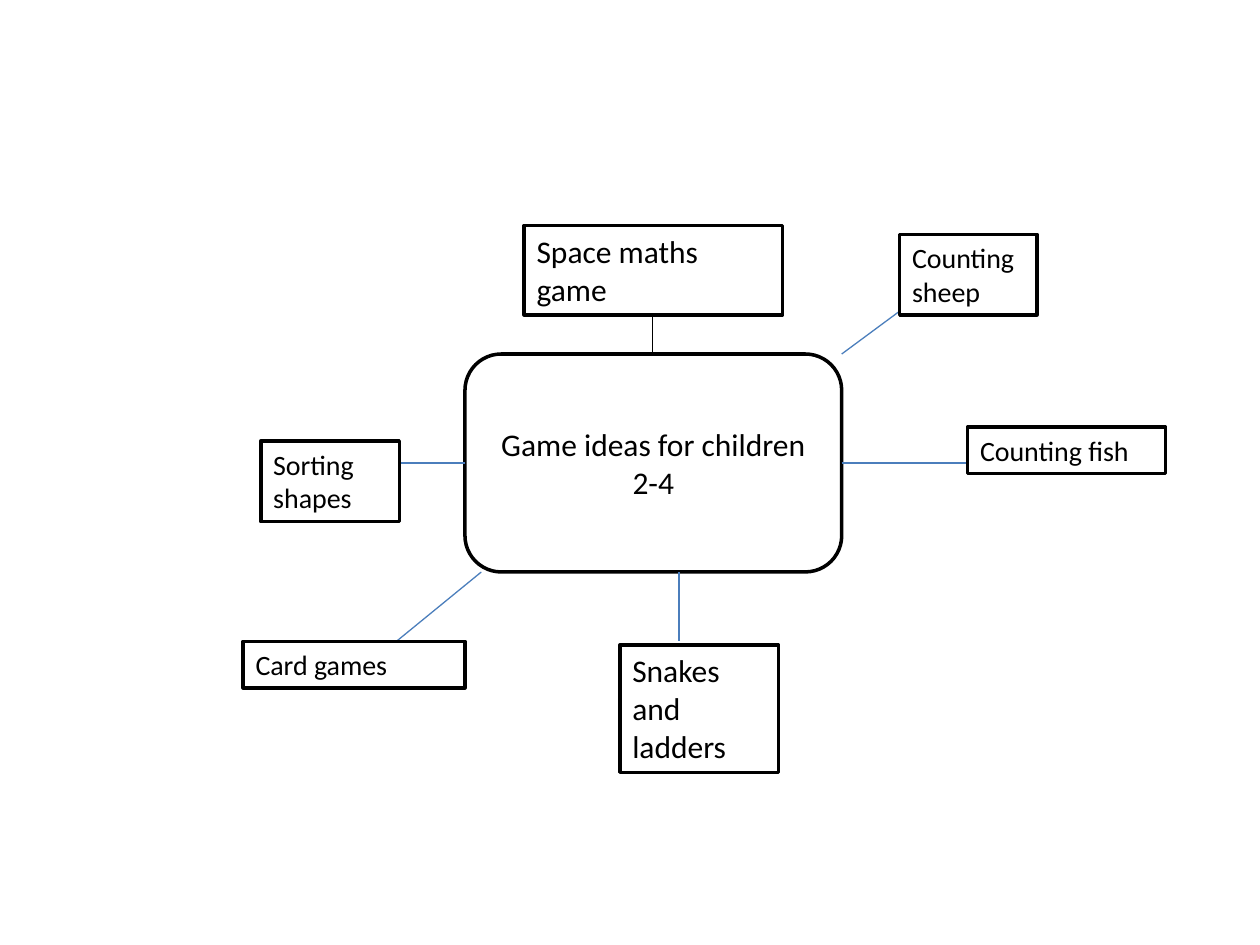
from lxml import etree
from pptx import Presentation
from pptx.dml.color import RGBColor
from pptx.enum.shapes import MSO_CONNECTOR, MSO_SHAPE
from pptx.enum.text import MSO_ANCHOR, MSO_AUTO_SIZE, PP_ALIGN
from pptx.oxml.ns import qn
from pptx.util import Inches, Pt

BLACK = RGBColor(0x00, 0x00, 0x00)
WHITE = RGBColor(0xFF, 0xFF, 0xFF)
BLUE = RGBColor(0x4B, 0x7E, 0xBC)
RECTANGLE = MSO_SHAPE.RECTANGLE
ROUNDED = MSO_SHAPE.ROUNDED_RECTANGLE
STRAIGHT = MSO_CONNECTOR.STRAIGHT
LEFT, CENTER = PP_ALIGN.LEFT, PP_ALIGN.CENTER
TOP, MIDDLE = MSO_ANCHOR.TOP, MSO_ANCHOR.MIDDLE
GROW = MSO_AUTO_SIZE.SHAPE_TO_FIT_TEXT

presentation = Presentation()
presentation.slide_width = Inches(10)
presentation.slide_height = Inches(7.5)
slide = presentation.slides.add_slide(presentation.slide_layouts[6])

# The slide is a grid of 100 columns by 75 rows.
COLUMN = presentation.slide_width / 100
ROW = presentation.slide_height / 75


def add_box(kind, text, size, left, top, width, height, align, anchor):
    shape = slide.shapes.add_shape(
        kind, round(left * COLUMN), round(top * ROW),
        round(width * COLUMN), round(height * ROW))
    shape.shadow.inherit = False
    shape.line.color.rgb = BLACK
    shape.line.width = Pt(2)
    frame = shape.text_frame
    frame.word_wrap = True
    frame.vertical_anchor = anchor
    paragraph = frame.paragraphs[0]
    paragraph.alignment = align
    run = paragraph.add_run()
    run.text = text
    run.font.name = "Calibri"
    run.font.size = Pt(size)
    run.font.color.rgb = BLACK
    return shape


# Central topic
hub_left, hub_top, hub_width, hub_height = 36.9, 28.1, 29.9, 17.3
hub_right = hub_left + hub_width
hub_bottom = hub_top + hub_height
hub_middle = hub_top + hub_height / 2
hub = add_box(ROUNDED, "Game ideas for children 2-4", 18,
              hub_left, hub_top, hub_width, hub_height, CENTER, MIDDLE)
hub.fill.background()

# Spokes: start column and row, end column and row, colour
spokes = [
    (51.8, 21.8, 51.8, hub_top, BLACK),
    (hub_right, hub_middle, 76.8, hub_middle, BLUE),
    (53.9, hub_bottom, 53.9, 50.9, BLUE),
    (30.3, hub_middle, hub_left, hub_middle, BLUE),
    (71.4, 24.7, hub_right, hub_top, BLUE),
    (31.1, 51.2, 38.2, hub_bottom, BLUE),
]
for start_x, start_y, end_x, end_y, color in spokes:
    spoke = slide.shapes.add_connector(
        STRAIGHT, round(start_x * COLUMN), round(start_y * ROW),
        round(end_x * COLUMN), round(end_y * ROW))
    spoke.line.color.rgb = color
    spoke.line.width = Pt(0.75)
    etree.SubElement(spoke._element.spPr, qn("a:effectLst"))

# Ideas: text, size, left, top, width, height
ideas = [
    ("Space maths game", 18, 41.6, 17.9, 20.5, 7.1),
    ("Counting fish", 16, 76.8, 33.9, 15.7, 3.7),
    ("Snakes and ladders", 18, 49.2, 51.2, 12.6, 10.1),
    ("Sorting shapes", 16, 20.7, 35, 11, 6.4),
    ("Counting sheep", 16, 71.4, 18.6, 10.9, 6.4),
    ("Card games", 16, 19.3, 50.9, 17.6, 3.7),
]
for text, size, left, top, width, height in ideas:
    idea = add_box(RECTANGLE, text, size, left, top, width, height, LEFT, TOP)
    idea.fill.solid()
    idea.fill.fore_color.rgb = WHITE
    idea.text_frame.auto_size = GROW

presentation.save("out.pptx")
